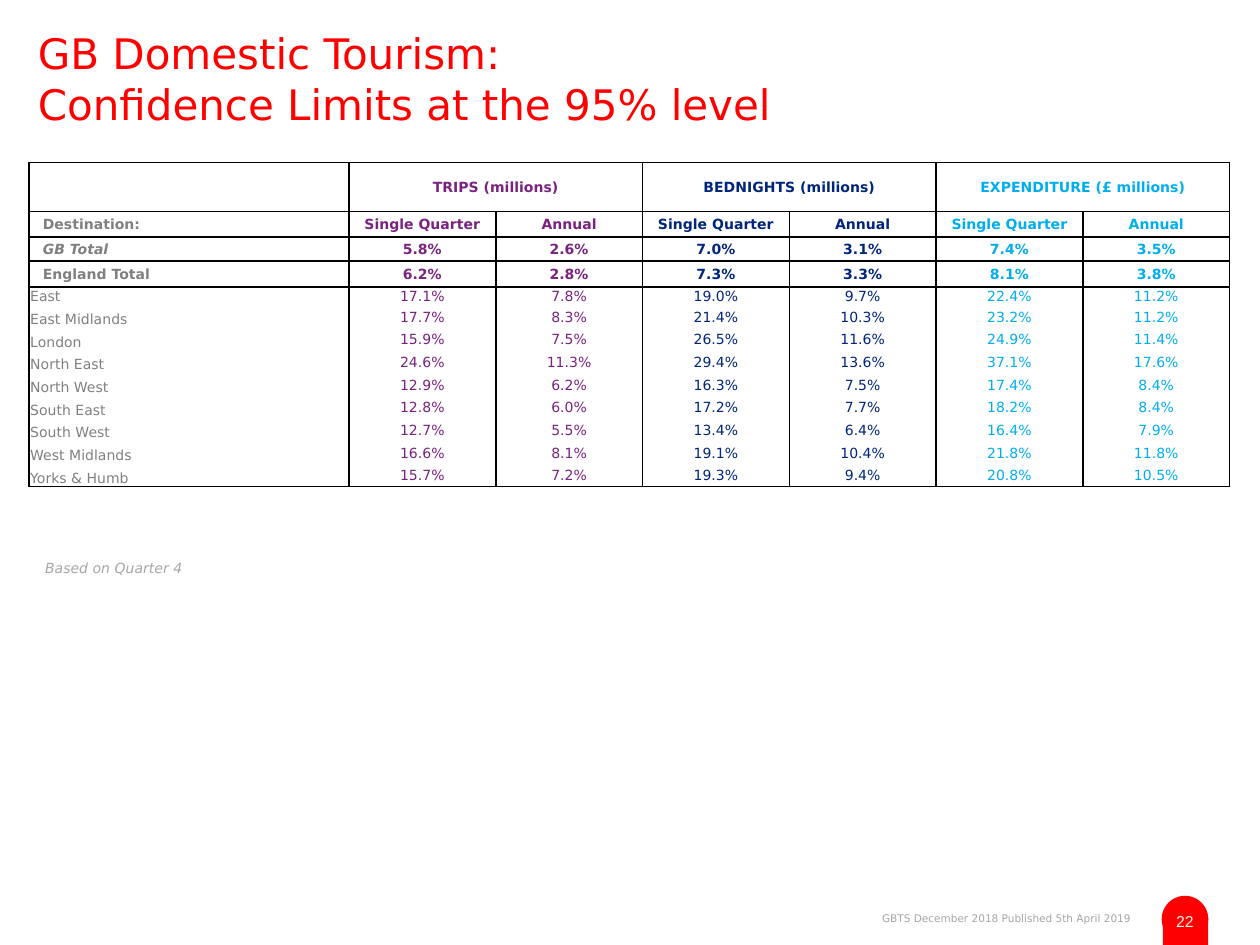
from dataclasses import dataclass

from lxml import etree
from pptx import Presentation
from pptx.dml.color import RGBColor
from pptx.enum.shapes import MSO_SHAPE
from pptx.enum.text import MSO_ANCHOR, MSO_AUTO_SIZE, PP_ALIGN
from pptx.oxml.ns import qn
from pptx.util import Inches, Pt

LEFT, CENTER, RIGHT = PP_ALIGN.LEFT, PP_ALIGN.CENTER, PP_ALIGN.RIGHT
TOP, MIDDLE, BOTTOM = MSO_ANCHOR.TOP, MSO_ANCHOR.MIDDLE, MSO_ANCHOR.BOTTOM
RECTANGLE, OVAL = MSO_SHAPE.RECTANGLE, MSO_SHAPE.OVAL
NO_TABLE_STYLE = "{2D5ABB26-0587-4C30-8999-92F81FD0307C}"


@dataclass(frozen=True)
class Theme:
    font: str = "DejaVu Sans"
    number_font: str = "Arial"
    red: str = "FF0000"
    label: str = "808080"
    muted: str = "A6A6A6"
    number: str = "F2F2F2"
    border: str = "000000"
    groups: tuple = ("7A2280", "00257A", "00AEEF")
    title_size: int = 24
    number_size: int = 9
    body_size: int = 8
    footer_size: int = 6


THEME = Theme()

TITLE = "GB Domestic Tourism:\vConfidence Limits at the 95% level"
NOTE = "Based on Quarter 4"
FOOTER = "GBTS December 2018 Published 5th April 2019"
PAGE_NUMBER = "22"

GROUPS = ["TRIPS (millions)", "BEDNIGHTS (millions)", "EXPENDITURE (£ millions)"]
ROWS = [
    ["Destination:"] + ["Single Quarter", "Annual"] * len(GROUPS),
    ["GB Total", "5.8%", "2.6%", "7.0%", "3.1%", "7.4%", "3.5%"],
    ["England Total", "6.2%", "2.8%", "7.3%", "3.3%", "8.1%", "3.8%"],
    ["East", "17.1%", "7.8%", "19.0%", "9.7%", "22.4%", "11.2%"],
    ["East Midlands", "17.7%", "8.3%", "21.4%", "10.3%", "23.2%", "11.2%"],
    ["London", "15.9%", "7.5%", "26.5%", "11.6%", "24.9%", "11.4%"],
    ["North East", "24.6%", "11.3%", "29.4%", "13.6%", "37.1%", "17.6%"],
    ["North West", "12.9%", "6.2%", "16.3%", "7.5%", "17.4%", "8.4%"],
    ["South East", "12.8%", "6.0%", "17.2%", "7.7%", "18.2%", "8.4%"],
    ["South West", "12.7%", "5.5%", "13.4%", "6.4%", "16.4%", "7.9%"],
    ["West Midlands", "16.6%", "8.1%", "19.1%", "10.4%", "21.8%", "11.8%"],
    ["Yorks & Humb", "15.7%", "7.2%", "19.3%", "9.4%", "20.8%", "10.5%"],
]
HEADER = ["", *(text for group in GROUPS for text in (group, ""))]
GRID = [HEADER, *ROWS]
FIRST_REGION = 4  # grid rows above this one are bold and ruled off

COLUMN_WIDTHS = [2.54] + [1.165] * 6
ROW_HEIGHTS = [0.39, 0.2, 0.19, 0.21, 0.14] + [0.18] * 8


def style(paragraph, color, size, align=LEFT, font=THEME.font, bold=False, italic=False):
    paragraph.alignment = align
    paragraph.font.name = font
    paragraph.font.size = Pt(size)
    paragraph.font.bold = bold
    paragraph.font.italic = italic
    paragraph.font.color.rgb = RGBColor.from_string(color)


def set_margins(target, left, top, right, bottom):
    target.margin_left, target.margin_top = Inches(left), Inches(top)
    target.margin_right, target.margin_bottom = Inches(right), Inches(bottom)


def add_title(slide):
    title = slide.shapes.title
    title.left, title.top = 0, Inches(-0.01)
    title.width, title.height = Inches(10), Inches(0.85)
    frame = title.text_frame
    frame.text = TITLE
    frame.auto_size = MSO_AUTO_SIZE.NONE
    frame.vertical_anchor = TOP
    set_margins(frame, 0.3, 0.23, 0.3, 0)
    frame.paragraphs[0].space_after = Pt(6)
    style(frame.paragraphs[0], THEME.red, THEME.title_size)


def add_caption(slide, text, left, top, height, size, align=LEFT, italic=False):
    box = slide.shapes.add_textbox(Inches(left), Inches(top), Inches(7.46), Inches(height))
    box.text_frame.word_wrap = True
    box.text_frame.text = text
    style(box.text_frame.paragraphs[0], THEME.muted, size, align, italic=italic)


def add_page_tab(slide):
    for kind, box in ((RECTANGLE, (9.23, 7.29, 0.36, 0.22)), (OVAL, (9.22, 7.11, 0.37, 0.37))):
        shape = slide.shapes.add_shape(kind, *map(Inches, box))
        shape.shadow.inherit = False
        shape.fill.solid()
        shape.fill.fore_color.rgb = RGBColor.from_string(THEME.red)
        shape.line.fill.background()
    frame = shape.text_frame
    frame.text = PAGE_NUMBER
    frame.word_wrap = False
    frame.vertical_anchor = MIDDLE
    set_margins(frame, 0, 0.04, 0, 0)
    style(frame.paragraphs[0], THEME.number, THEME.number_size, CENTER, THEME.number_font)


def border_sides(row, column):
    """Box each column group; rule off the heading rows and the table's end."""
    starts_group = column == 0 or column % 2 == 1
    ends_group = column % 2 == 0
    rules = (
        ("L", starts_group),
        ("R", ends_group),
        ("T", row < FIRST_REGION),
        ("B", row < FIRST_REGION - 1 or row == len(GRID) - 1),
    )
    return [side for side, shown in rules if shown]


def draw_borders(cell, sides):
    properties = cell._tc.get_or_add_tcPr()
    for index, side in enumerate(sides):
        line = etree.Element(qn(f"a:ln{side}"), w=str(Pt(1)))
        fill = etree.SubElement(line, qn("a:solidFill"))
        etree.SubElement(fill, qn("a:srgbClr"), val=THEME.border)
        properties.insert(index, line)


def fill_cell(cell, row, column, text):
    is_label = column == 0
    is_region = row >= FIRST_REGION
    cell.text = text
    cell.fill.background()
    cell.vertical_anchor = BOTTOM if is_label and is_region else MIDDLE
    set_margins(cell, 0.01, 0.01, 0.01, 0)
    paragraph = cell.text_frame.paragraphs[0]
    if is_label and not is_region:
        paragraph._p.get_or_add_pPr().set("indent", str(Inches(0.1)))
    style(
        paragraph,
        THEME.label if is_label else THEME.groups[(column - 1) // 2],
        THEME.body_size,
        LEFT if is_label else CENTER,
        bold=not is_region,
        italic=text == "GB Total",
    )
    draw_borders(cell, border_sides(row, column))


def add_limits_table(slide):
    frame = slide.shapes.add_table(
        len(GRID), len(COLUMN_WIDTHS), Inches(0.23), Inches(1.29),
        Inches(sum(COLUMN_WIDTHS)), Inches(sum(ROW_HEIGHTS)),
    )
    table = frame.table
    table.first_row = table.horz_banding = False
    table._tbl.tblPr.find(qn("a:tableStyleId")).text = NO_TABLE_STYLE
    for column, width in zip(table.columns, COLUMN_WIDTHS):
        column.width = Inches(width)
    for row, height in zip(table.rows, ROW_HEIGHTS):
        row.height = Inches(height)
    for row, texts in enumerate(GRID):
        for column, text in enumerate(texts):
            fill_cell(table.cell(row, column), row, column, text)
    for column in range(1, len(COLUMN_WIDTHS), 2):
        table.cell(0, column).merge(table.cell(0, column + 1))
        draw_borders(table.cell(0, column), ["R"])


def main():
    presentation = Presentation()
    presentation.slide_width, presentation.slide_height = Inches(10), Inches(7.5)
    slide = presentation.slides.add_slide(presentation.slide_layouts[5])
    add_page_tab(slide)
    add_caption(slide, FOOTER, 1.61, 7.19, 0.2, THEME.footer_size, RIGHT)
    add_title(slide)
    add_caption(slide, NOTE, 0.26, 4.39, 0.24, THEME.body_size, italic=True)
    add_limits_table(slide)
    presentation.save("out.pptx")


if __name__ == "__main__":
    main()
